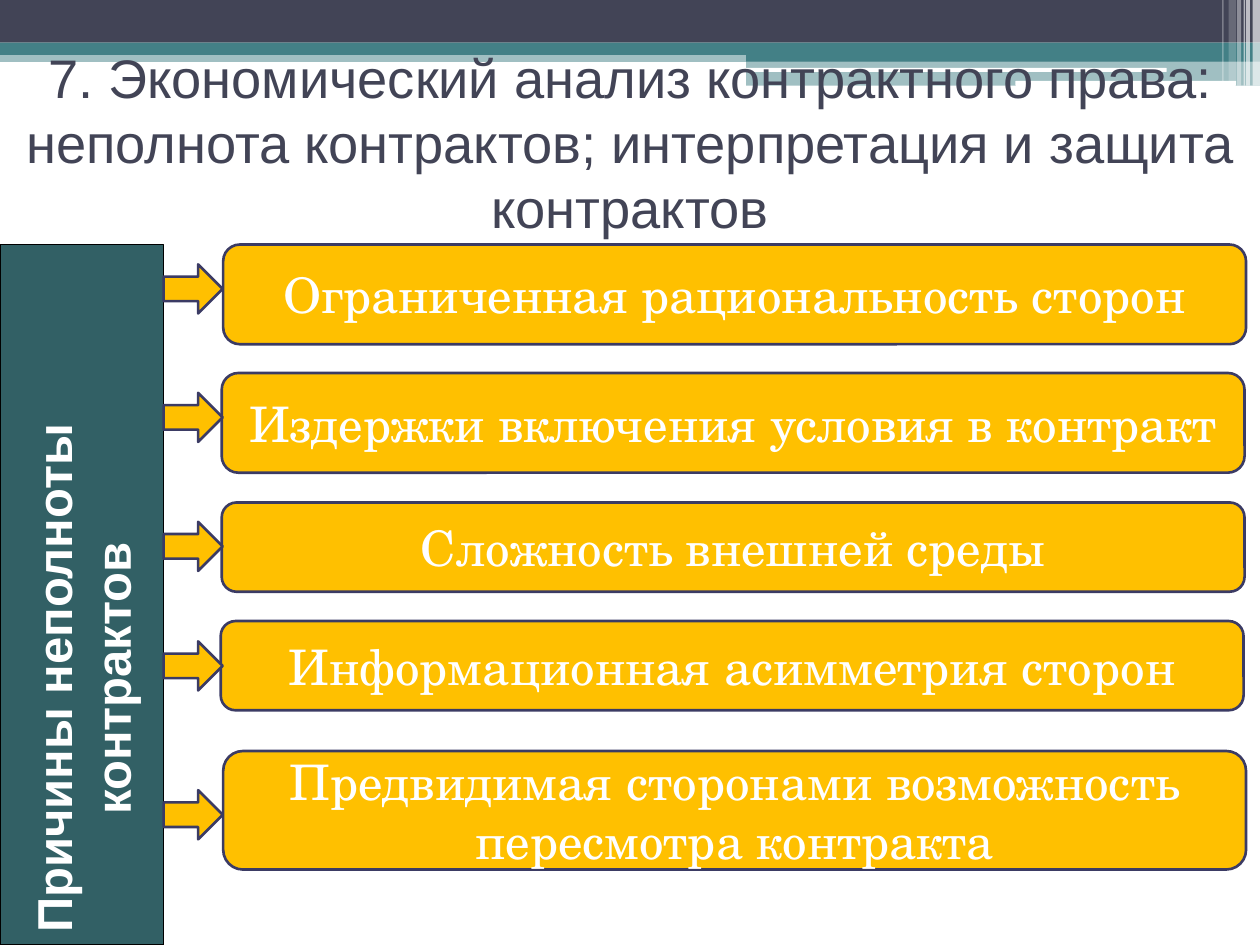
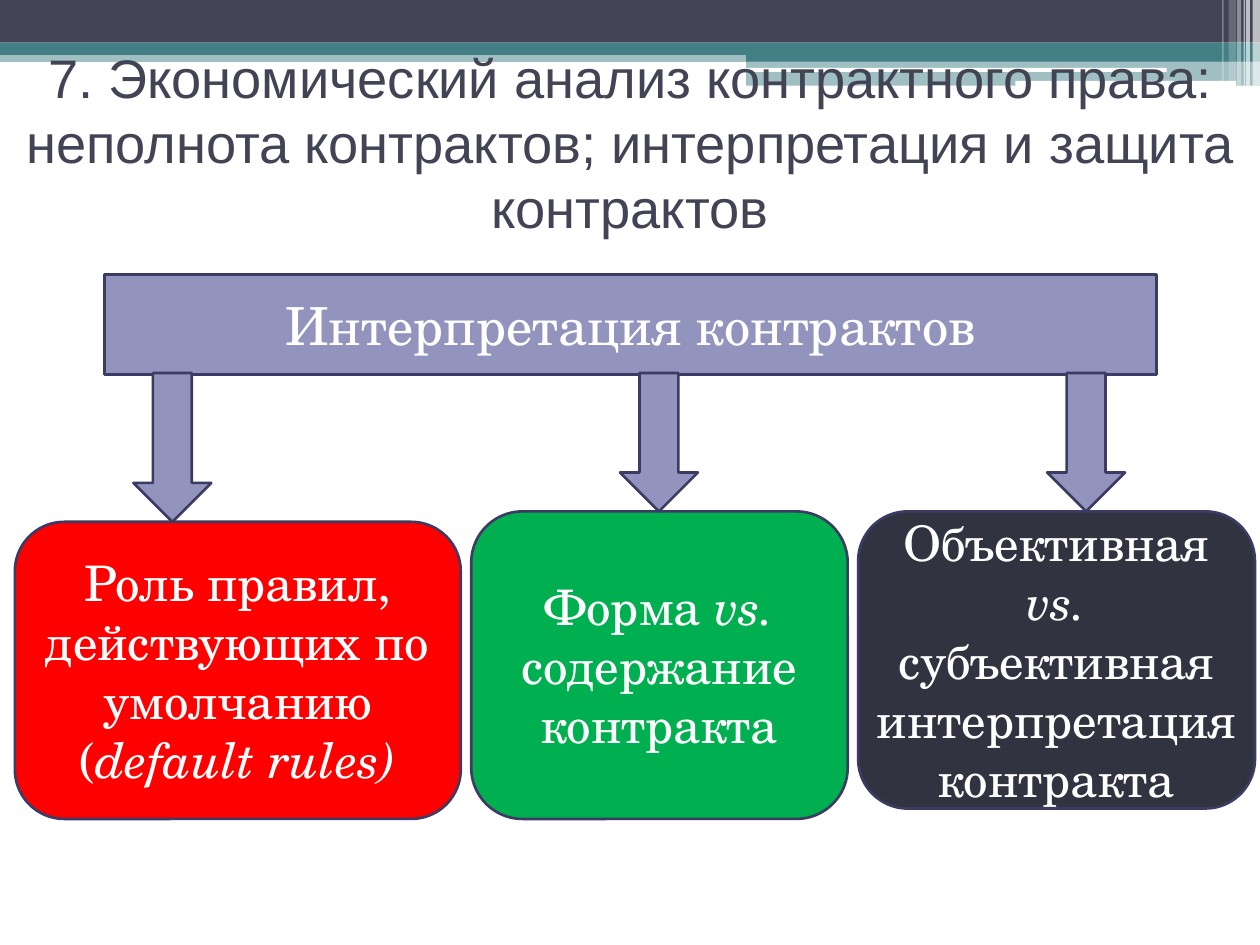
"""Build two slides on incomplete contracts and their interpretation."""
from dataclasses import dataclass
from typing import NamedTuple

from lxml import etree
from pptx import Presentation
from pptx import util as u
from pptx.dml.color import RGBColor
from pptx.enum import shapes, text
from pptx.oxml import ns
from pptx.shapes.autoshape import Shape
from pptx.slide import Slide

RECT = shapes.MSO_SHAPE.RECTANGLE
ROUNDED = shapes.MSO_SHAPE.ROUNDED_RECTANGLE


@dataclass(frozen=True)
class Theme:
    """Colours, fonts and sizes of the presentation."""

    slate: str = "424456"
    teal: str = "438086"
    deep_teal: str = "326065"
    white: str = "FFFFFF"
    black: str = "000000"
    amber: str = "FFC000"
    lilac: str = "9394BE"
    red: str = "FF0000"
    green: str = "00B050"
    night: str = "323341"
    outline: str = "3B3B64"
    sans: str = "Arial"
    serif: str = "TeX Gyre Schola"
    title_size: float = 31
    heading_size: float = 30
    body_size: float = 28
    outline_width: float = 1.5
    thin_width: float = 0.75


THEME = Theme()


class Box(NamedTuple):
    """Position and size in centimetres."""

    left: float
    top: float
    width: float
    height: float


class Band(NamedTuple):
    """One part of the decorated top edge."""

    box: Box
    color: str
    opacity: int = 100
    kind: shapes.MSO_SHAPE = RECT


class Phrase(NamedTuple):
    """A piece of text that may be italic."""

    words: str
    italic: bool = False


class Reason(NamedTuple):
    """A reason for incompleteness and the top of its arrow."""

    words: str
    box: Box
    arrow_top: float


class Aspect(NamedTuple):
    """An aspect of interpretation and the left of its arrow."""

    phrases: tuple[Phrase, ...]
    box: Box
    color: str
    arrow_left: float
    side_inset: float = 0.25


SLIDE_WIDTH, SLIDE_HEIGHT = 25.4, 19.05
TITLE = ("7. Экономический анализ контрактного права: неполнота контрактов; "
         "интерпретация и защита контрактов")
TITLE_BOX = Box(0, 1.19, SLIDE_WIDTH, 3.33)

BANDS = (
    Band(Box(0, 1.02, SLIDE_WIDTH, 0.23), THEME.teal, 50),
    Band(Box(0, 0, SLIDE_WIDTH, 0.86), THEME.slate),
    Band(Box(0, 0.86, SLIDE_WIDTH, 0.25), THEME.teal),
    Band(Box(15.04, 0.99, 10.36, 0.25), THEME.teal),
    Band(Box(15.04, 1.22, 10.36, 0.51), THEME.teal, 50),
    Band(Box(15.01, 1.37, 8.51, 0.08), THEME.white, kind=ROUNDED),
    Band(Box(20.47, 1.63, 4.45, 0.1), THEME.white, kind=ROUNDED),
    Band(Box(25.25, 0, 0.15, 1.73), THEME.white, 65),
    Band(Box(25.12, 0, 0.08, 1.73), THEME.white, 65),
    Band(Box(25.07, 0, 0.03, 1.73), THEME.white, 60),
    Band(Box(24.94, 0, 0.08, 1.73), THEME.white, 40),
    Band(Box(24.77, 0, 0.15, 1.63), THEME.white, 20),
    Band(Box(24.64, 0, 0.03, 1.63), THEME.white, 30),
)

SIDE_LABEL = Box(0, 4.93, 3.3, 14.12)
REASON_WIDTH = 20.62
REASON_ARROW_WIDTH, REASON_ARROW_HEIGHT = 1.19, 0.99
REASONS = (
    Reason("Ограниченная рациональность сторон",
           Box(4.5, 4.93, REASON_WIDTH, 2.01), 5.33),
    Reason("Издержки включения условия в контракт",
           Box(4.47, 7.52, REASON_WIDTH, 2.01), 7.92),
    Reason("Сложность внешней среды",
           Box(4.47, 10.13, REASON_WIDTH, 1.8), 10.52),
    Reason("Информационная асимметрия сторон",
           Box(4.45, 12.52, REASON_WIDTH, 1.8), 12.93),
    Reason("Предвидимая сторонами возможность пересмотра контракта",
           Box(4.5, 15.14, REASON_WIDTH, 2.39), 15.93),
)

INTERPRETATION = Box(2.11, 5.54, 21.21, 2.01)
ASPECT_ARROW_TOP, ASPECT_ARROW_WIDTH = 7.52, 1.57
ASPECTS = (
    Aspect((Phrase("Роль правил, действующих по умолчанию ("),
            Phrase("default rules)", True)),
           Box(0.3, 10.52, 8.99, 5.99), THEME.red, 2.69),
    Aspect((Phrase("Форма "), Phrase("vs.", True),
            Phrase(" содержание контракта")),
           Box(9.5, 10.31, 7.59, 6.2), THEME.green, 12.5),
    Aspect((Phrase("Объективная "), Phrase("vs.", True),
            Phrase(" субъективная интерпретация контракта")),
           Box(17.3, 10.31, 8, 5.99), THEME.night, 21.11, 0),
)


def place(box: Box) -> tuple[u.Length, ...]:
    """Convert a box to slide lengths."""
    return tuple(u.Cm(length) for length in box)


def add_figure(slide: Slide, kind: shapes.MSO_SHAPE, box: Box, color: str,
               outline: str | None = None,
               outline_width: float = THEME.outline_width) -> Shape:
    """Draw a filled preset shape with an optional outline."""
    figure = slide.shapes.add_shape(kind, *place(box))
    figure.shadow.inherit = False
    figure.fill.solid()
    figure.fill.fore_color.rgb = RGBColor.from_string(color)
    if outline:
        figure.line.color.rgb = RGBColor.from_string(outline)
        figure.line.width = u.Pt(outline_width)
    else:
        figure.line.fill.background()
    return figure


def write(holder: Shape, phrases: tuple[Phrase, ...], size: float,
          font: str = THEME.serif, color: str = THEME.white,
          bold: bool = False, side_inset: float = 0.25) -> None:
    """Write one centred paragraph into a shape."""
    frame = holder.text_frame
    frame.word_wrap = True
    frame.vertical_anchor = text.MSO_ANCHOR.MIDDLE
    frame.margin_left = frame.margin_right = u.Cm(side_inset)
    paragraph = frame.paragraphs[0]
    paragraph.alignment = text.PP_ALIGN.CENTER
    paragraph.font.size = u.Pt(size)
    paragraph.font.name = font
    paragraph.font.bold = bold
    paragraph.font.color.rgb = RGBColor.from_string(color)
    for phrase in phrases:
        run = paragraph.add_run()
        run.text = phrase.words
        if phrase.italic:
            run.font.italic = True


def set_opacity(figure: Shape, percent: int) -> None:
    """Make the fill of a shape partly transparent."""
    fill_color = figure.element.spPr.find(
        f"{ns.qn('a:solidFill')}/{ns.qn('a:srgbClr')}")
    etree.SubElement(fill_color, ns.qn("a:alpha"), val=str(percent * 1000))


def add_bands(slide: Slide) -> None:
    """Draw the decorated top edge."""
    for band in BANDS:
        figure = add_figure(slide, band.kind, band.box, band.color)
        if band.opacity < 100:
            set_opacity(figure, band.opacity)


def add_title(slide: Slide) -> None:
    """Write the shared title."""
    title = slide.shapes.add_textbox(*place(TITLE_BOX))
    write(title, (Phrase(TITLE),), THEME.title_size, THEME.sans, THEME.slate)


def add_side_label(slide: Slide) -> None:
    """Draw the upright label that reads from bottom to top."""
    label = add_figure(slide, RECT, SIDE_LABEL, THEME.deep_teal,
                       THEME.black, THEME.thin_width)
    label.rotation = 180
    write(label, (Phrase("Причины неполноты контрактов"),),
          THEME.body_size, THEME.sans, bold=True)
    label.text_frame._txBody.bodyPr.set("vert", "eaVert")


def build_reasons(slide: Slide) -> None:
    """Draw the reasons for incomplete contracts."""
    add_side_label(slide)
    for reason in REASONS:
        card = add_figure(slide, ROUNDED, reason.box, THEME.amber,
                          THEME.outline)
        write(card, (Phrase(reason.words),), THEME.body_size, side_inset=0)
        arrow = Box(SIDE_LABEL.width, reason.arrow_top,
                    REASON_ARROW_WIDTH, REASON_ARROW_HEIGHT)
        add_figure(slide, shapes.MSO_SHAPE.RIGHT_ARROW, arrow, THEME.amber,
                   THEME.outline)


def build_interpretation(slide: Slide) -> None:
    """Draw the aspects of contract interpretation."""
    heading = add_figure(slide, RECT, INTERPRETATION, THEME.lilac,
                         THEME.outline)
    write(heading, (Phrase("Интерпретация контрактов"),), THEME.heading_size)
    for aspect in ASPECTS:
        card = add_figure(slide, ROUNDED, aspect.box, aspect.color,
                          THEME.outline)
        write(card, aspect.phrases, THEME.body_size,
              side_inset=aspect.side_inset)
        arrow = Box(aspect.arrow_left, ASPECT_ARROW_TOP, ASPECT_ARROW_WIDTH,
                    aspect.box.top - ASPECT_ARROW_TOP)
        add_figure(slide, shapes.MSO_SHAPE.DOWN_ARROW, arrow, THEME.lilac,
                   THEME.outline)


def main() -> None:
    """Build and save the presentation."""
    deck = Presentation()
    deck.slide_width, deck.slide_height = u.Cm(SLIDE_WIDTH), u.Cm(SLIDE_HEIGHT)
    for build in (build_reasons, build_interpretation):
        slide = deck.slides.add_slide(deck.slide_layouts[6])
        add_bands(slide)
        build(slide)
        add_title(slide)
    deck.save("out.pptx")


if __name__ == "__main__":
    main()
